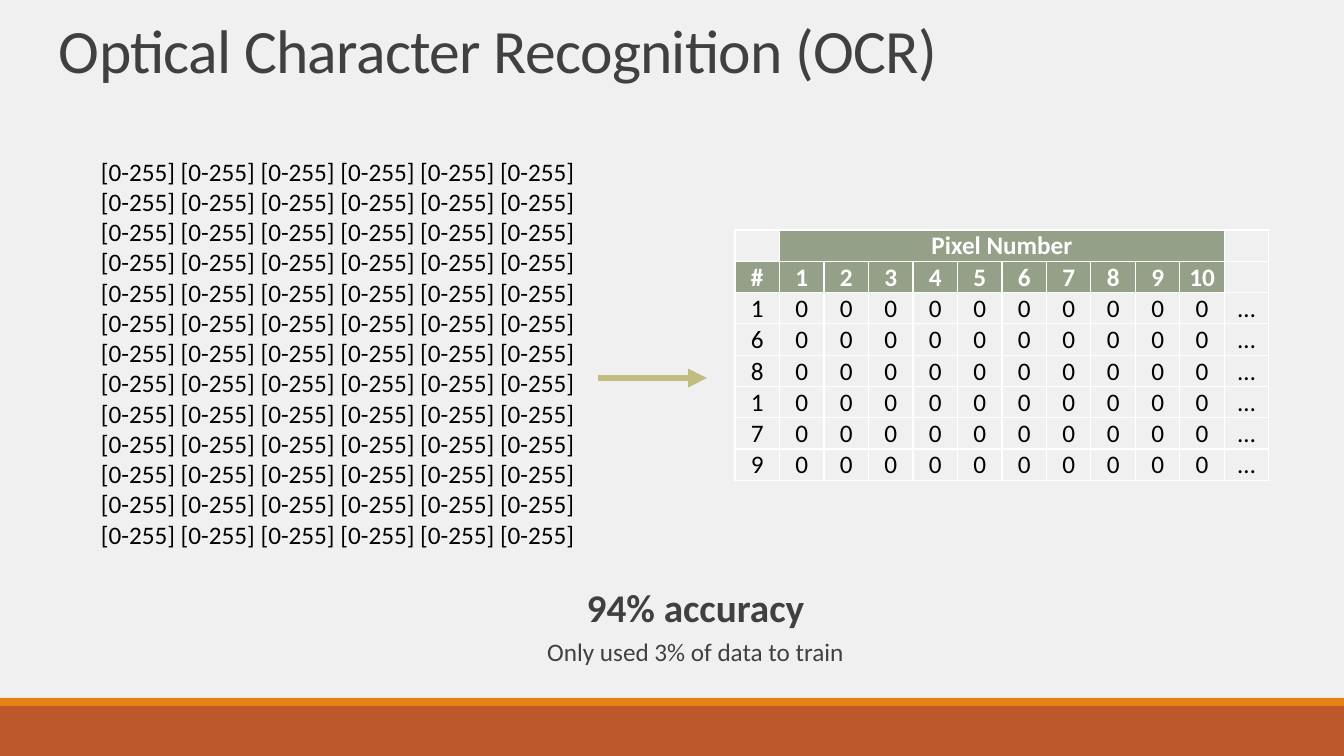
from lxml import etree
from pptx import Presentation
from pptx import util as u
from pptx.dml.color import RGBColor
from pptx.enum import shapes, text
from pptx.oxml.ns import qn

# Content
TITLE = "Optical Character Recognition (OCR)"
MATRIX_ROWS, MATRIX_COLUMNS = 13, 6
MATRIX_LINE = " ".join(["[0-255]"] * MATRIX_COLUMNS)
PIXELS = 10
TABLE_TITLE = "Pixel Number"
DIGITS = [1, 6, 8, 1, 7, 9]
RESULTS = [("94% accuracy", 28, True), ("Only used 3% of data to train", 18, False)]

FONT = "Calibri"
COLORS = {
    "background": "F0F0F0", "band": "BD582C", "stripe": "E48312",
    "heading": "404040", "body": "000000", "header_text": "FFFFFF",
    "header_fill": "94A088", "arrow": "C2BC80",
}

# Geometry in px
PX = 914400 / 100.8
WIDTH, HEIGHT = 1344, 756
BARS = [(706, 50, "band"), (698, 8, "stripe")]
TITLE_BOX = (49, 15, 1204, 76)
MATRIX_BOX = (91, 151, 520, 437)
RESULT_BOX = (500, 574, 369, 104)
TABLE_LEFT, TABLE_TOP, TABLE_WIDTH, ROW_HEIGHT = 735, 230, 534, 31
ARROW = (598, 378, 707, 378)
RESULT_INDENT = 22


def px(*lengths):
    return [u.Emu(round(length * PX)) for length in lengths]


def rgb(name):
    return RGBColor.from_string(COLORS[name])


def style(para, size, color, bold=False):
    font = para.font
    font.name, font.size, font.bold = FONT, u.Pt(size), bold
    font.color.rgb = rgb(color)


def add_text(page, area, lines, color, spacing=1.0, align=text.PP_ALIGN.LEFT):
    """Add a wrapped box with one paragraph per (wording, size, bold)."""
    frame = page.shapes.add_textbox(*px(*area)).text_frame
    frame.word_wrap = True
    for index, (wording, size, bold) in enumerate(lines):
        para = frame.paragraphs[0] if index == 0 else frame.add_paragraph()
        para.text = wording
        para.alignment = align
        para.line_spacing = spacing
        style(para, size, color, bold)
    return frame


deck = Presentation()
deck.slide_width, deck.slide_height = px(WIDTH, HEIGHT)
page = deck.slides.add_slide(deck.slide_layouts[6])
page.background.fill.solid()
page.background.fill.fore_color.rgb = rgb("background")

# Footer bars
for top, height, color in BARS:
    bar = page.shapes.add_shape(shapes.MSO_SHAPE.RECTANGLE, *px(0, top, WIDTH, height))
    bar.shadow.inherit = False
    bar.fill.solid()
    bar.fill.fore_color.rgb = rgb(color)
    bar.line.fill.background()

# Title
title = add_text(page, TITLE_BOX, [(TITLE, 44, False)], "heading", 0.85)
title.vertical_anchor = text.MSO_ANCHOR.BOTTOM
for span in title.paragraphs[0].runs:
    span.font._element.set("spc", "-50")

# Pixel value matrix
add_text(page, MATRIX_BOX, [(MATRIX_LINE, 18, False)] * MATRIX_ROWS, "body")

# Table of digits and their pixels
rows = [
    ["", TABLE_TITLE] + [""] * PIXELS,
    ["#", *range(1, PIXELS + 1), ""],
    *[[digit] + [0] * PIXELS + ["…"] for digit in DIGITS],
]
columns = PIXELS + 2
frame = page.shapes.add_table(
    len(rows), columns,
    *px(TABLE_LEFT, TABLE_TOP, TABLE_WIDTH, ROW_HEIGHT * len(rows)))
table = frame.table
table.first_row = table.horz_banding = False
for column in table.columns:
    column.width = px(TABLE_WIDTH / columns)[0]
for r, values in enumerate(rows):
    table.rows[r].height = px(ROW_HEIGHT)[0]
    for c, value in enumerate(values):
        cell = table.cell(r, c)
        cell.margin_left, cell.margin_right, cell.margin_top, cell.margin_bottom = px(1, 1, 1, 0)
        cell.vertical_anchor = text.MSO_ANCHOR.BOTTOM
        is_header = r < 2
        if is_header and c <= PIXELS and (r, c) != (0, 0):
            cell.fill.solid()
            cell.fill.fore_color.rgb = rgb("header_fill")
        else:
            cell.fill.background()
        para = cell.text_frame.paragraphs[0]
        para.text = str(value)
        para.alignment = text.PP_ALIGN.CENTER
        style(para, 18, "header_text" if is_header else "body", is_header)
table.cell(0, 1).merge(table.cell(0, PIXELS))

# Arrow from matrix to table
arrow = page.shapes.add_connector(shapes.MSO_CONNECTOR.STRAIGHT, *px(*ARROW))
arrow.line.color.rgb = rgb("arrow")
arrow.line.width = u.Pt(4.5)
etree.SubElement(arrow.line._get_or_add_ln(), qn("a:tailEnd"), type="triangle")
etree.SubElement(arrow._element.spPr, qn("a:effectLst"))

# Result
result = add_text(page, RESULT_BOX, RESULTS, "heading", 1.1, text.PP_ALIGN.CENTER)
for para in result.paragraphs:
    properties = para._p.get_or_add_pPr()
    properties.set("marL", str(px(RESULT_INDENT)[0]))
    properties.set("indent", "0")
result.paragraphs[1].space_before = u.Pt(2)

deck.save("out.pptx")
